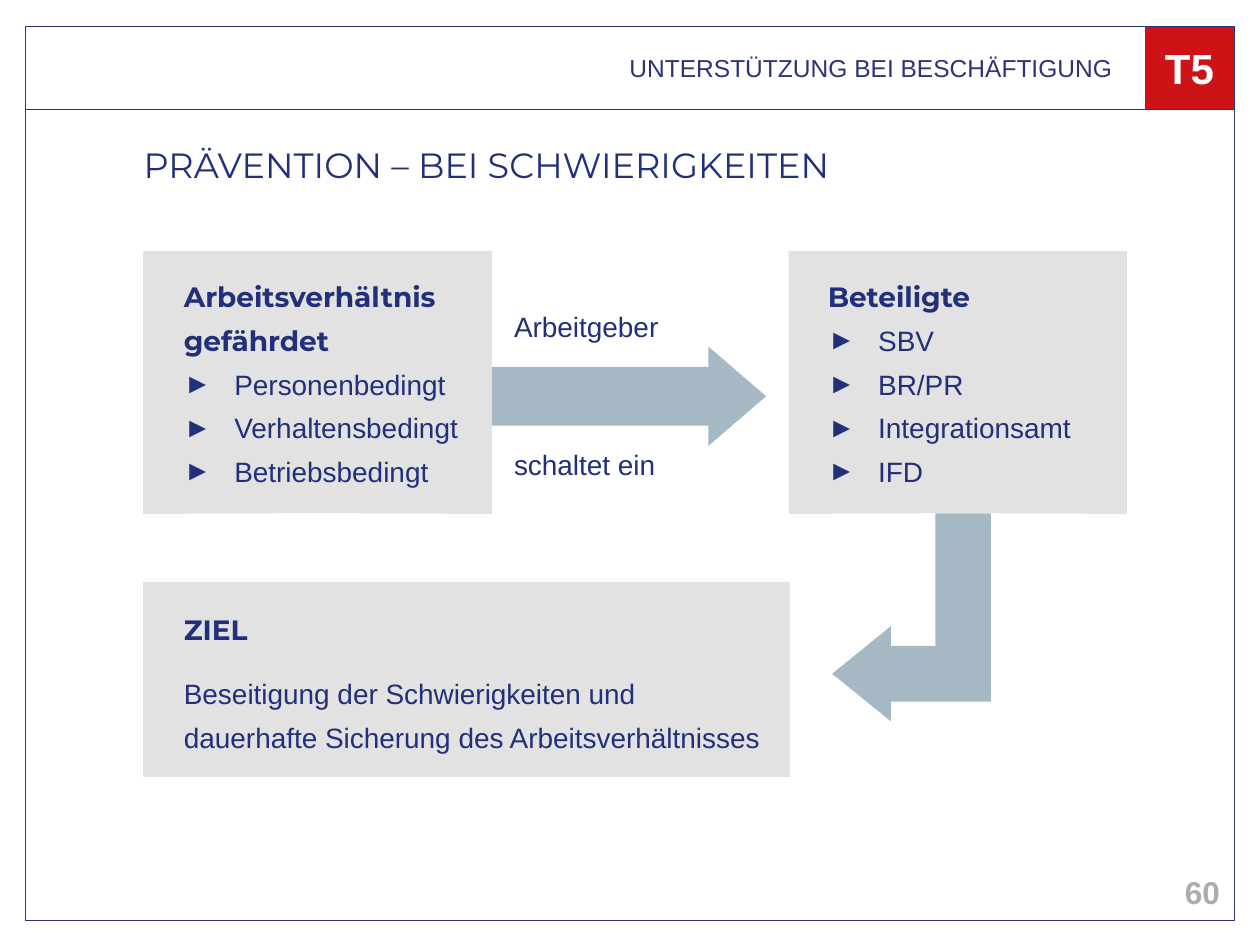
from dataclasses import dataclass

from lxml.etree import SubElement
from pptx import Presentation
from pptx.dml.color import RGBColor
from pptx.enum.shapes import MSO_SHAPE
from pptx.enum.text import MSO_ANCHOR, MSO_AUTO_SIZE, PP_ALIGN
from pptx.oxml.ns import qn
from pptx.util import Inches, Pt


@dataclass(frozen=True)
class Theme:
    navy: str = "222F79"
    frame: str = "2C3477"
    red: str = "CD1316"
    panel: str = "E2E2E3"
    arrow: str = "A5B8C3"
    grey: str = "ACACAC"
    white: str = "FFFFFF"
    heading_font: str = "Montserrat"
    text_font: str = "Arial"
    badge_size: int = 24
    title_size: int = 20
    number_size: int = 18
    text_size: int = 16
    header_size: int = 14


THEME = Theme()


@dataclass(frozen=True)
class Box:
    left: float
    top: float
    width: float
    height: float

    def lengths(self) -> tuple:
        return tuple(Inches(v) for v in (self.left, self.top, self.width, self.height))


@dataclass(frozen=True)
class Line:
    text: str
    size: int = THEME.text_size
    color: str = THEME.navy
    font: str = THEME.text_font
    bold: bool = False
    bullet: bool = False
    align: PP_ALIGN = PP_ALIGN.LEFT
    spacing: float = 1.3
    before: int = 0


def heading(text: str) -> Line:
    return Line(text, font=THEME.heading_font, bold=True)


def bullets(*items: str) -> list[Line]:
    return [Line(item, bullet=True) for item in items]


def add_block(slide, kind, box: Box, fill: str = "", outline: str = "", adjust=()):
    block = slide.shapes.add_shape(kind, *box.lengths())
    block.shadow.inherit = False
    for index, value in enumerate(adjust):
        block.adjustments[index] = value
    if fill:
        block.fill.solid()
        block.fill.fore_color.rgb = RGBColor.from_string(fill)
    else:
        block.fill.background()
    if outline:
        block.line.color.rgb = RGBColor.from_string(outline)
        block.line.width = Pt(0.25)
    else:
        block.line.fill.background()
    return block


def set_bullet(paragraph, shown: bool) -> None:
    """Write the indent and the bullet explicitly, overriding the template's list style."""
    props = paragraph._p.get_or_add_pPr()
    indent = Inches(0.4) if shown else 0
    props.set("marL", str(indent))
    props.set("indent", str(-indent))
    if shown:
        color = SubElement(props, qn("a:buClr"))
        SubElement(color, qn("a:srgbClr"), val=THEME.navy)
        SubElement(props, qn("a:buFont"), typeface=THEME.text_font)
        SubElement(props, qn("a:buChar"), char="►")
    else:
        SubElement(props, qn("a:buNone"))


def write(holder, box: Box, lines: list[Line], anchor=MSO_ANCHOR.TOP, right: float = 0) -> None:
    """Move the holder to the front, place it and fill it with the lines."""
    tree = holder._element.getparent()
    tree.append(holder._element)
    holder.left, holder.top, holder.width, holder.height = box.lengths()
    frame = holder.text_frame
    frame.word_wrap = True
    frame.auto_size = MSO_AUTO_SIZE.NONE
    frame.vertical_anchor = anchor
    frame.margin_left = frame.margin_top = frame.margin_bottom = 0
    frame.margin_right = Inches(right)
    for index, line in enumerate(lines):
        paragraph = frame.add_paragraph() if index else frame.paragraphs[0]
        set_bullet(paragraph, line.bullet)
        paragraph.level = 2 if line.bullet else 0
        paragraph.alignment = line.align
        paragraph.line_spacing = line.spacing
        paragraph.space_before = Pt(line.before)
        paragraph.space_after = Pt(0)
        run = paragraph.add_run()
        run.text = line.text
        run.font.size = Pt(line.size)
        run.font.name = line.font
        run.font.bold = line.bold
        run.font.color.rgb = RGBColor.from_string(line.color)


def add_text(slide, box: Box, lines: list[Line], **layout) -> None:
    write(slide.shapes.add_textbox(*box.lengths()), box, lines, **layout)


def draw_frame(slide) -> None:
    badge = Box(9.09, 0.21, 0.7, 0.66)
    add_block(slide, MSO_SHAPE.RECTANGLE, badge, THEME.red, THEME.red)
    for height in (0.66, 7.09):
        add_block(slide, MSO_SHAPE.RECTANGLE, Box(0.2, 0.21, 9.6, height), outline=THEME.frame)
    title, header, _, mark, _ = slide.placeholders
    write(title, Box(1.14, 1.18, 7.63, 0.66),
          [Line("PRÄVENTION – BEI SCHWIERIGKEITEN", THEME.title_size,
                font=THEME.heading_font, spacing=0.9)])
    write(header, Box(0.2, 0.21, 8.89, 0.66),
          [Line("UNTERSTÜTZUNG BEI BESCHÄFTIGUNG", THEME.header_size, THEME.frame,
                align=PP_ALIGN.RIGHT, spacing=1)],
          MSO_ANCHOR.MIDDLE, right=0.26)
    write(mark, badge,
          [Line("T5", THEME.badge_size, THEME.white, bold=True,
                align=PP_ALIGN.CENTER, spacing=1)], MSO_ANCHOR.MIDDLE)
    add_text(slide, Box(7.53, 6.88, 2.25, 0.4),
             [Line("60", THEME.number_size, THEME.grey, bold=True,
                   align=PP_ALIGN.RIGHT, spacing=1)],
             anchor=MSO_ANCHOR.MIDDLE, right=0.1)


def draw_process(slide) -> None:
    add_block(slide, MSO_SHAPE.RIGHT_ARROW, Box(3.8, 2.75, 2.28, 0.79),
              THEME.arrow, adjust=(0.59, 0.58))
    to_goal = add_block(slide, MSO_SHAPE.BENT_UP_ARROW, Box(6.41, 4.27, 1.65, 1.26),
                        THEME.arrow, adjust=(0.35, 0.3, 0.37))
    to_goal.rotation = 90
    to_goal._element.spPr.find(qn("a:xfrm")).set("flipV", "1")

    for panel in (Box(1.14, 1.99, 2.76, 2.08), Box(6.26, 1.99, 2.68, 2.08),
                  Box(1.14, 4.62, 5.12, 1.54)):
        add_block(slide, MSO_SHAPE.RECTANGLE, panel, THEME.panel, THEME.panel)

    _, _, causes, _, parties = sorted(
        slide.placeholders, key=lambda holder: holder.placeholder_format.idx)
    write(causes, Box(1.46, 2.14, 2.28, 1.77),
          [heading("Arbeitsverhältnis gefährdet"),
           *bullets("Personenbedingt", "Verhaltensbedingt", "Betriebsbedingt")])
    write(parties, Box(6.57, 2.14, 2.28, 1.77),
          [heading("Beteiligte"), *bullets("SBV", "BR/PR", "Integrationsamt", "IFD")])
    add_text(slide, Box(1.46, 4.78, 4.63, 1.24),
             [heading("ZIEL"),
              Line("Beseitigung der Schwierigkeiten und dauerhafte Sicherung "
                   "des Arbeitsverhältnisses", before=12)])
    for label, top in (("Arbeitgeber", 2.38), ("schaltet ein", 3.47)):
        add_text(slide, Box(4.08, top, 1.73, 0.4), [Line(label)])


def main() -> None:
    deck = Presentation()
    deck.slide_width, deck.slide_height = Inches(10), Inches(7.5)
    comparison_layout = deck.slide_layouts[4]
    slide = deck.slides.add_slide(comparison_layout)
    draw_frame(slide)
    draw_process(slide)
    deck.save("out.pptx")


if __name__ == "__main__":
    main()
